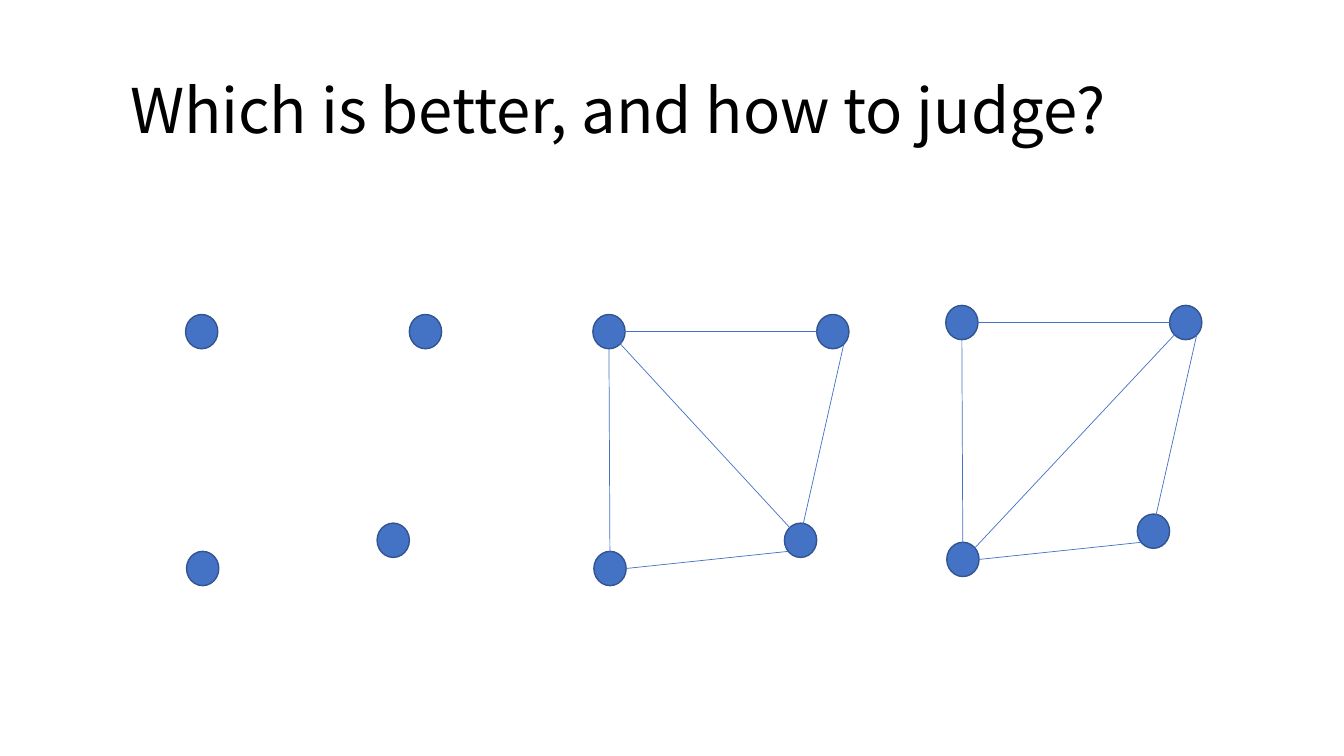
from dataclasses import dataclass
from pptx import Presentation, util as u
from pptx.dml.color import RGBColor
from pptx.enum import shapes, text
from pptx.oxml import parse_xml
from pptx.oxml.ns import nsdecls


@dataclass(frozen=True)
class Theme:
    font: str = "Noto Sans CJK JP"
    ink: str = "000000"
    blue: str = "4472C4"
    rim: str = "325491"
    title: float = 44
    edge: float = 0.5
    rim_width: float = 1


theme = Theme()
WIDE, HIGH = 13.33, 7.5
TITLE = "Which is better, and how to judge?"
TITLE_BOX = (0.92, 0.4, 11.5, 1.45)
INDENT = 0.37
DOT = (0.32, 0.34)
DOTS = [(2.22, 0), (0, 0), (1.9, 2.07), (0.01, 2.35)]
FRAME = [
    ((0.16, 0.34), (0.17, 2.52)),
    ((0.17, 0.17), (2.22, 0.17)),
    ((2.49, 0.29), (2.05, 2.24)),
    ((0.33, 2.52), (1.94, 2.35)),
]
FALLING = ((0.16, 0.17), (2.17, 2.35))
RISING = ((2.27, 0.29), (0.21, 2.49))
GRAPHS = [
    ((1.84, 3.12), []),
    ((5.88, 3.12), FRAME + [FALLING]),
    ((9.38, 3.03), FRAME + [RISING]),
]


def color(name):
    return RGBColor.from_string(name)


def place(start, step):
    return [u.Inches(a + b) for a, b in zip(start, step)]


def add_title(slide):
    box = slide.shapes.add_textbox(*map(u.Inches, TITLE_BOX))
    frame = box.text_frame
    frame.word_wrap = True
    frame.vertical_anchor = text.MSO_ANCHOR.MIDDLE
    frame.margin_left = u.Inches(INDENT)
    frame.text = TITLE
    line = frame.paragraphs[0]
    line.line_spacing = 0.9
    font = line.runs[0].font
    font.name, font.size = theme.font, u.Pt(theme.title)
    font.color.rgb = color(theme.ink)


def add_dot(group, start, step):
    dot = group.shapes.add_shape(
        shapes.MSO_SHAPE.OVAL, *place(start, step), *map(u.Inches, DOT))
    dot.shadow.inherit = False
    dot.fill.solid()
    dot.fill.fore_color.rgb = color(theme.blue)
    dot.line.color.rgb = color(theme.rim)
    dot.line.width = u.Pt(theme.rim_width)


def add_edge(slide, start, head, tail):
    edge = slide.shapes.add_connector(
        shapes.MSO_CONNECTOR.STRAIGHT, *place(start, head), *place(start, tail))
    edge.line.color.rgb = color(theme.blue)
    edge.line.width = u.Pt(theme.edge)
    edge._element.spPr.append(parse_xml(f"<a:effectLst {nsdecls('a')}/>"))


def main():
    deck = Presentation()
    deck.slide_width, deck.slide_height = u.Inches(WIDE), u.Inches(HIGH)
    slide = deck.slides.add_slide(deck.slide_layouts[6])
    add_title(slide)
    for start, edges in GRAPHS:
        group = slide.shapes.add_group_shape()
        for step in DOTS:
            add_dot(group, start, step)
        for head, tail in edges:
            add_edge(slide, start, head, tail)
    deck.save("out.pptx")


if __name__ == "__main__":
    main()
